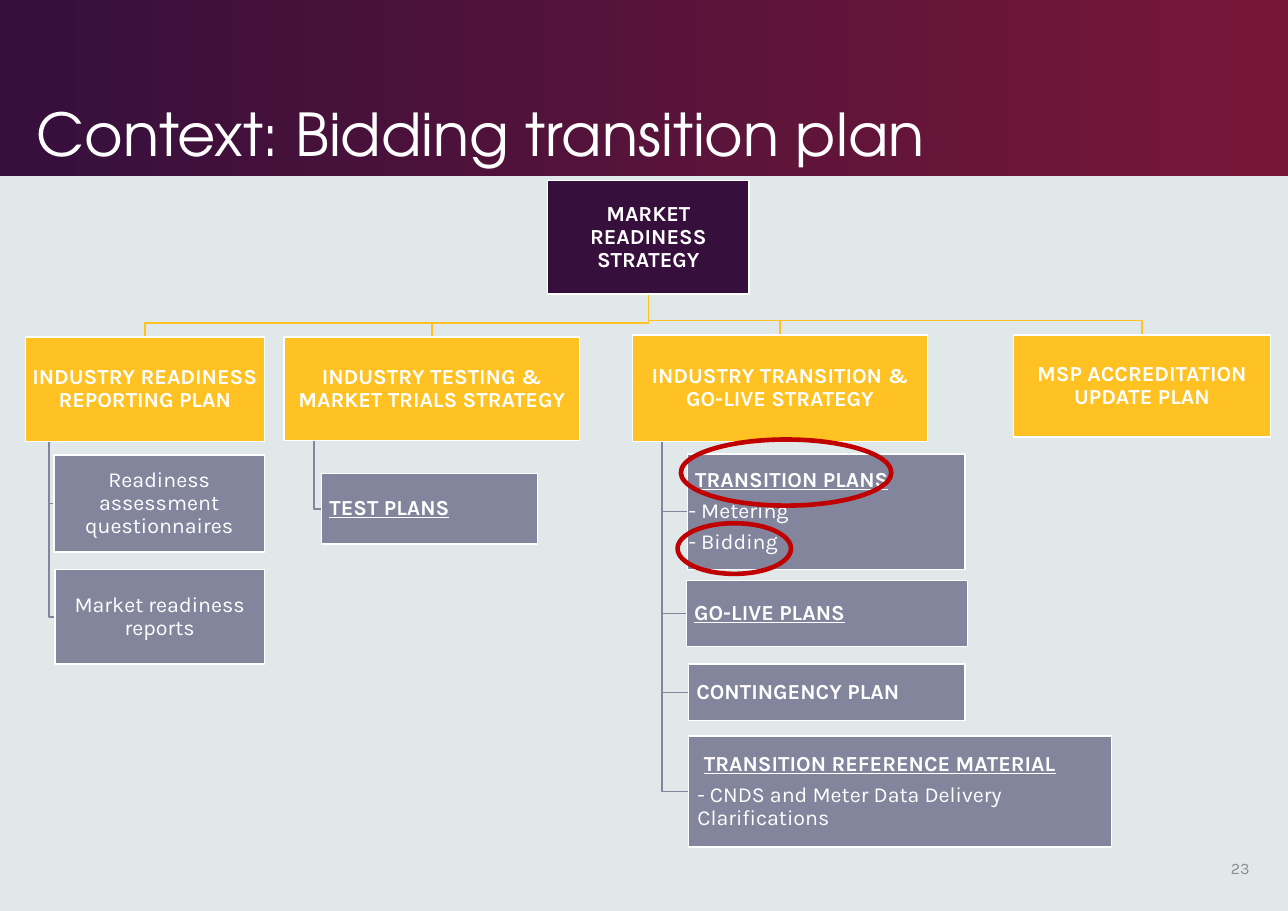
from pptx import Presentation
from pptx.dml.color import RGBColor
from pptx.enum.shapes import MSO_SHAPE
from pptx.enum.text import MSO_ANCHOR, MSO_AUTO_SIZE, PP_ALIGN
from pptx.util import Inches, Pt

RECTANGLE, OVAL = MSO_SHAPE.RECTANGLE, MSO_SHAPE.OVAL
LEFT, CENTER, RIGHT = PP_ALIGN.LEFT, PP_ALIGN.CENTER, PP_ALIGN.RIGHT
MIDDLE, BOTTOM = MSO_ANCHOR.MIDDLE, MSO_ANCHOR.BOTTOM
NO_AUTOFIT = MSO_AUTO_SIZE.NONE

COLOURS = {name: RGBColor.from_string(value) for name, value in {
    "background": "E0E8EA", "purple": "360F3C", "wine": "771738",
    "yellow": "FFC222", "slate": "82859C", "white": "FFFFFF",
    "grey": "8D8D8E", "red": "C00000",
}.items()}

prs = Presentation()
prs.slide_width, prs.slide_height = Inches(11.69), Inches(8.27)
slide = prs.slides.add_slide(prs.slide_layouts[5])
shapes = slide.shapes
slide.background.fill.solid()
slide.background.fill.fore_color.rgb = COLOURS["background"]


def write(paragraph, text, size=14, font="Karla", colour="white", bold=False,
          underline=False, align=CENTER, indent=0, line=0.9, after=0):
    pPr = paragraph._p.get_or_add_pPr()
    pPr.set("marL", str(Inches(indent)))
    pPr.set("indent", "0")
    paragraph.alignment = align
    paragraph.line_spacing = line
    paragraph.space_before, paragraph.space_after = Pt(0), Pt(after)
    run = paragraph.add_run()
    run.text = text
    run.font.size, run.font.name = Pt(size), font
    run.font.bold, run.font.underline = bold, underline
    run.font.color.rgb = COLOURS[colour]


def draw_branch(points, colour):
    start, *rest = [(Inches(x), Inches(y)) for x, y in points]
    builder = shapes.build_freeform(*start)
    builder.add_line_segments(rest, close=False)
    branch = builder.convert_to_shape()
    branch.shadow.inherit = False
    branch.fill.background()
    branch.line.color.rgb = COLOURS[colour]
    branch.line.width = Pt(1)


# Header band and title
band = shapes.add_shape(RECTANGLE, 0, 0, prs.slide_width, Inches(1.6))
band.shadow.inherit = False
band.line.fill.background()
band.fill.gradient()
band.fill.gradient_angle = 0
for stop, colour, position in zip(band.fill.gradient_stops, ("purple", "wine"), (0, 0.99)):
    stop.color.rgb = COLOURS[colour]
    stop.position = position
shapes._spTree.insert(2, band._element)

title = shapes.title
title.left, title.top, title.width, title.height = map(Inches, (0.23, 0.16, 8.63, 1.43))
title.text_frame.auto_size = NO_AUTOFIT
title.text_frame.vertical_anchor = BOTTOM
write(title.text_frame.paragraphs[0], "Context: Bidding transition plan",
      size=38.6, font="TeX Gyre Adventor", align=LEFT)

page_number = shapes.add_textbox(*map(Inches, (10.89, 7.66, 0.55, 0.44)))
page_number.text_frame.vertical_anchor = MIDDLE
write(page_number.text_frame.paragraphs[0], "23",
      size=10.5, colour="grey", align=RIGHT, line=1)

# Paragraph styles used in the boxes
STRONG = dict(bold=True)
PLAIN = dict()
HEADING = dict(bold=True, align=LEFT, indent=0.06)
LINKED = dict(HEADING, underline=True)
ITEM = dict(align=LEFT)

# Each strategy: place, text, and its documents (place, left inset, paragraphs)
root_place = (4.97, 1.64, 1.83, 1.03)
strategies = [
    ((0.23, 3.06, 2.17, 0.95), "INDUSTRY READINESS REPORTING PLAN", [
        ((0.49, 4.13, 1.91, 0.88), 0.01, [("Readiness assessment questionnaires", PLAIN)]),
        ((0.5, 5.17, 1.9, 0.86), 0.01, [("Market readiness reports", PLAIN)]),
    ]),
    ((2.58, 3.06, 2.68, 0.94), "INDUSTRY TESTING & MARKET TRIALS STRATEGY", [
        ((2.92, 4.3, 1.96, 0.64), 0.01, [("TEST PLANS", LINKED)]),
    ]),
    ((5.74, 3.04, 2.68, 0.97), "INDUSTRY TRANSITION & GO-LIVE STRATEGY", [
        ((6.24, 4.12, 2.52, 1.05), 0.01, [
            ("TRANSITION PLANS", LINKED), ("- Metering", ITEM), ("- Bidding", ITEM)]),
        ((6.23, 5.27, 2.55, 0.6), 0.01, [("GO-LIVE PLANS", LINKED)]),
        ((6.25, 6.03, 2.51, 0.51), 0.01, [("CONTINGENCY PLAN", HEADING)]),
        ((6.25, 6.68, 3.84, 1.01), 0.08, [
            ("TRANSITION REFERENCE MATERIAL", LINKED),
            ("- CNDS and Meter Data Delivery Clarifications", ITEM)]),
    ]),
    ((9.2, 3.04, 2.33, 0.93), "MSP ACCREDITATION UPDATE PLAN", []),
]

# Branches go behind the boxes
root_x = root_place[0] + root_place[2] / 2
root_bottom = root_place[1] + root_place[3]
boxes = [(root_place, "purple", 0.01, [("MARKET READINESS STRATEGY", STRONG)])]
for place, name, documents in strategies:
    left, top, width, height = place
    middle, turn = left + width / 2, top - 0.13
    draw_branch([(root_x, root_bottom), (root_x, turn), (middle, turn), (middle, top)], "yellow")
    boxes.append((place, "yellow", 0.01, [(name, STRONG)]))
    trunk = left + width / 10
    for document_place, inset, paragraphs in documents:
        x, y, _, document_height = document_place
        level = y + document_height / 2
        draw_branch([(trunk, top + height), (trunk, level), (x, level)], "slate")
        boxes.append((document_place, "slate", inset, paragraphs))

for place, colour, inset, paragraphs in boxes:
    box = shapes.add_shape(RECTANGLE, *map(Inches, place))
    box.shadow.inherit = False
    box.fill.solid()
    box.fill.fore_color.rgb = COLOURS[colour]
    box.line.color.rgb = COLOURS["white"]
    box.line.width = Pt(1)
    frame = box.text_frame
    frame.word_wrap = True
    frame.vertical_anchor = MIDDLE
    frame.margin_left = Inches(inset)
    frame.margin_top = frame.margin_right = frame.margin_bottom = Inches(0.01)
    for index, (text, style) in enumerate(paragraphs):
        paragraph = frame.add_paragraph() if index else frame.paragraphs[0]
        write(paragraph, text, after=4.9, **style)

# Rings around the transition plans and the bidding item
for place in [(6.15, 4.75, 1.03, 0.46), (6.18, 3.99, 1.91, 0.6)]:
    ring = shapes.add_shape(OVAL, *map(Inches, place))
    ring.shadow.inherit = False
    ring.fill.background()
    ring.line.color.rgb = COLOURS["red"]
    ring.line.width = Pt(3)

prs.save("out.pptx")
